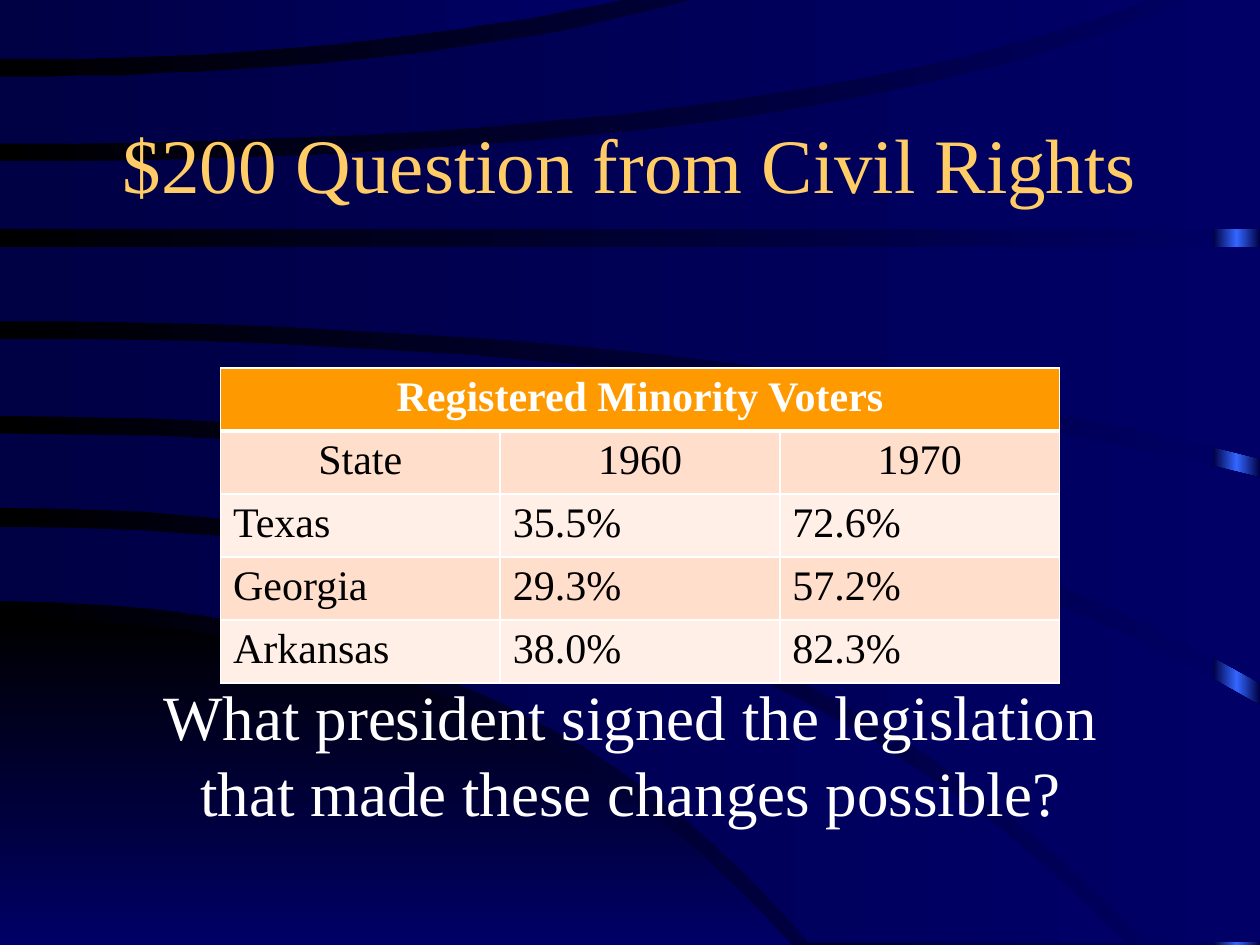
from copy import deepcopy
from dataclasses import dataclass

from lxml.etree import SubElement
from pptx import Presentation
from pptx.dml.color import RGBColor
from pptx.dml.fill import FillFormat
from pptx.enum.shapes import MSO_SHAPE
from pptx.enum.text import MSO_ANCHOR, MSO_AUTO_SIZE, PP_ALIGN
from pptx.oxml.ns import qn
from pptx.shapes.autoshape import Shape
from pptx.slide import Slide
from pptx.table import _Cell
from pptx.text.text import TextFrame
from pptx.util import Emu, Pt

PX = 9144  # EMU in one px: 100 px to the inch
CURVE_STEPS = 20
Point = tuple[int, int]


@dataclass(frozen=True)
class Theme:
    font: str = "Times New Roman"
    title_size: int = 44
    question_size: int = 36
    table_size: int = 24
    black: str = "000000"
    white: str = "FFFFFF"
    navy: str = "000066"
    deep_navy: str = "000044"
    glow: str = "3366FF"
    gold: str = "FFCC66"
    header: str = "FF9900"
    stripes: tuple[str, str] = ("FFDECC", "FFEFE7")


THEME = Theme()


@dataclass(frozen=True)
class Box:
    left: int
    top: int
    width: int
    height: int

    def emu(self) -> tuple[Emu, ...]:
        return tuple(Emu(value * PX) for value in (self.left, self.top, self.width, self.height))


@dataclass(frozen=True)
class Edge:
    """A quadratic curve that leaves the left side of the slide level and bends after `bend`."""
    start_y: int
    bend: int
    end_x: int
    end_y: int

    def points(self) -> list[Point]:
        steps = [step / CURVE_STEPS for step in range(CURVE_STEPS + 1)]
        return [(round(2 * t * (1 - t) * self.bend + t * t * self.end_x),
                 round(self.start_y + t * t * (self.end_y - self.start_y))) for t in steps]


@dataclass(frozen=True)
class Band:
    upper: Edge
    lower: Edge
    start_color: str = THEME.deep_navy
    end_color: str = THEME.navy
    angle: int = 0

    def outline(self) -> list[Point]:
        shorter = min(self.upper, self.lower, key=lambda edge: edge.end_x)
        corner = (max(self.upper.end_x, self.lower.end_x), shorter.end_y)
        return [*self.upper.points(), corner, *reversed(self.lower.points())]


# Curved background bands, from back to front
BANDS = [
    Band(Edge(491, 404, 628, 750), Edge(750, 314, 628, 750), THEME.black, THEME.navy, 270),
    Band(Edge(418, 574, 893, 748), Edge(477, 417, 642, 748)),
    Band(Edge(344, 640, 1000, 560), Edge(403, 588, 909, 748)),
    Band(Edge(269, 554, 1000, 379), Edge(330, 630, 1000, 542)),
    Band(Edge(196, 500, 1000, 196), Edge(255, 564, 1000, 364)),
    Band(Edge(128, 672, 943, -2), Edge(182, 500, 1000, 182)),
    Band(Edge(61, 338, 556, -2), Edge(114, 616, 917, -2)),
    Band(Edge(-2, 250, 501, -2), Edge(47, 280, 501, -2)),
]

VOTERS = [
    ("State", "1960", "1970"),
    ("Texas", "35.5%", "72.6%"),
    ("Georgia", "29.3%", "57.2%"),
    ("Arkansas", "38.0%", "82.3%"),
]
COLUMN_WIDTH, ROW_HEIGHT = 222, 41


def paint_gradient(fill: FillFormat, colors: list[str], angle: int = 0) -> None:
    """Spread two or more colours evenly along the gradient."""
    fill.gradient()
    fill.gradient_angle = angle
    first_stop = fill.gradient_stops[0]._gs
    for _ in colors[2:]:
        first_stop.addnext(deepcopy(first_stop))
    for index, (stop, color) in enumerate(zip(fill.gradient_stops, colors)):
        stop.position = index / (len(colors) - 1)
        stop.color.rgb = RGBColor.from_string(color)


def finish_backdrop(shape: Shape, colors: list[str], angle: int = 0) -> None:
    shape.shadow.inherit = False
    shape.line.fill.background()
    paint_gradient(shape.fill, colors, angle)


def draw_band(slide: Slide, band: Band) -> None:
    first_point, *other_points = band.outline()
    builder = slide.shapes.build_freeform(*first_point, scale=PX)
    builder.add_line_segments(other_points, close=True)
    finish_backdrop(builder.convert_to_shape(), [band.start_color, band.end_color], band.angle)


def write(frame: TextFrame, text: str, size: int, color: str,
          alignment: PP_ALIGN = PP_ALIGN.CENTER, bold: bool = False) -> None:
    frame.text = text
    paragraph = frame.paragraphs[0]
    paragraph.alignment = alignment
    font = paragraph.font
    font.name, font.size, font.bold = THEME.font, Pt(size), bold
    font.color.rgb = RGBColor.from_string(color)


def style_cell(cell: _Cell, color: str, top: int = 1, bottom: int = 1) -> None:
    """Give a cell white borders (widths in points) and a plain fill."""
    properties = cell._tc.get_or_add_tcPr()
    for side, width in {"L": 1, "R": 1, "T": top, "B": bottom}.items():
        line = SubElement(properties, qn(f"a:ln{side}"), w=str(Pt(width)))
        SubElement(SubElement(line, qn("a:solidFill")), qn("a:srgbClr"), val=THEME.white)
    cell.fill.solid()
    cell.fill.fore_color.rgb = RGBColor.from_string(color)


def draw_voter_table(slide: Slide, heading: str) -> None:
    row_count, column_count = len(VOTERS) + 1, len(VOTERS[0])
    box = Box(175, 292, COLUMN_WIDTH * column_count, ROW_HEIGHT * row_count)
    table = slide.shapes.add_table(row_count, column_count, *box.emu()).table
    table.horz_banding = False

    for cell in table.rows[0].cells:
        style_cell(cell, THEME.header, bottom=3)
    table.cell(0, 0).merge(table.cell(0, column_count - 1))
    write(table.cell(0, 0).text_frame, heading, THEME.table_size, THEME.white, bold=True)

    for row, values in enumerate(VOTERS, start=1):
        alignment = PP_ALIGN.CENTER if row == 1 else PP_ALIGN.LEFT
        for column, value in enumerate(values):
            cell = table.cell(row, column)
            style_cell(cell, THEME.stripes[(row - 1) % 2], top=3 if row == 1 else 1)
            write(cell.text_frame, value, THEME.table_size, THEME.black, alignment)


def main() -> None:
    presentation = Presentation()
    presentation.slide_width, presentation.slide_height = Emu(1000 * PX), Emu(750 * PX)
    slide = presentation.slides.add_slide(presentation.slide_layouts[5])

    # Background, glowing right edge and bands
    paint_gradient(slide.background.fill, [THEME.black, THEME.navy])
    glow_strip = slide.shapes.add_shape(MSO_SHAPE.RECTANGLE, *Box(963, 0, 37, 750).emu())
    finish_backdrop(glow_strip, [THEME.deep_navy, THEME.glow, THEME.deep_navy])
    for band in BANDS:
        draw_band(slide, band)

    # Title, brought in front of the bands
    title = slide.shapes.title
    title.left, title.top, title.width, title.height = Box(75, 67, 850, 125).emu()
    title.text_frame.vertical_anchor = MSO_ANCHOR.MIDDLE
    title.text_frame.auto_size = MSO_AUTO_SIZE.NONE
    write(title.text_frame, "$200 Question from Civil Rights", THEME.title_size, THEME.gold)
    title.element.getparent().append(title.element)

    # Question
    question = slide.shapes.add_textbox(*Box(92, 533, 817, 131).emu()).text_frame
    question.word_wrap = True
    question.auto_size = MSO_AUTO_SIZE.SHAPE_TO_FIT_TEXT
    write(question, "What president signed the legislation that made these changes possible?",
          THEME.question_size, THEME.white)

    # Table of voters
    draw_voter_table(slide, "Registered Minority Voters")
    presentation.save("out.pptx")


if __name__ == "__main__":
    main()
